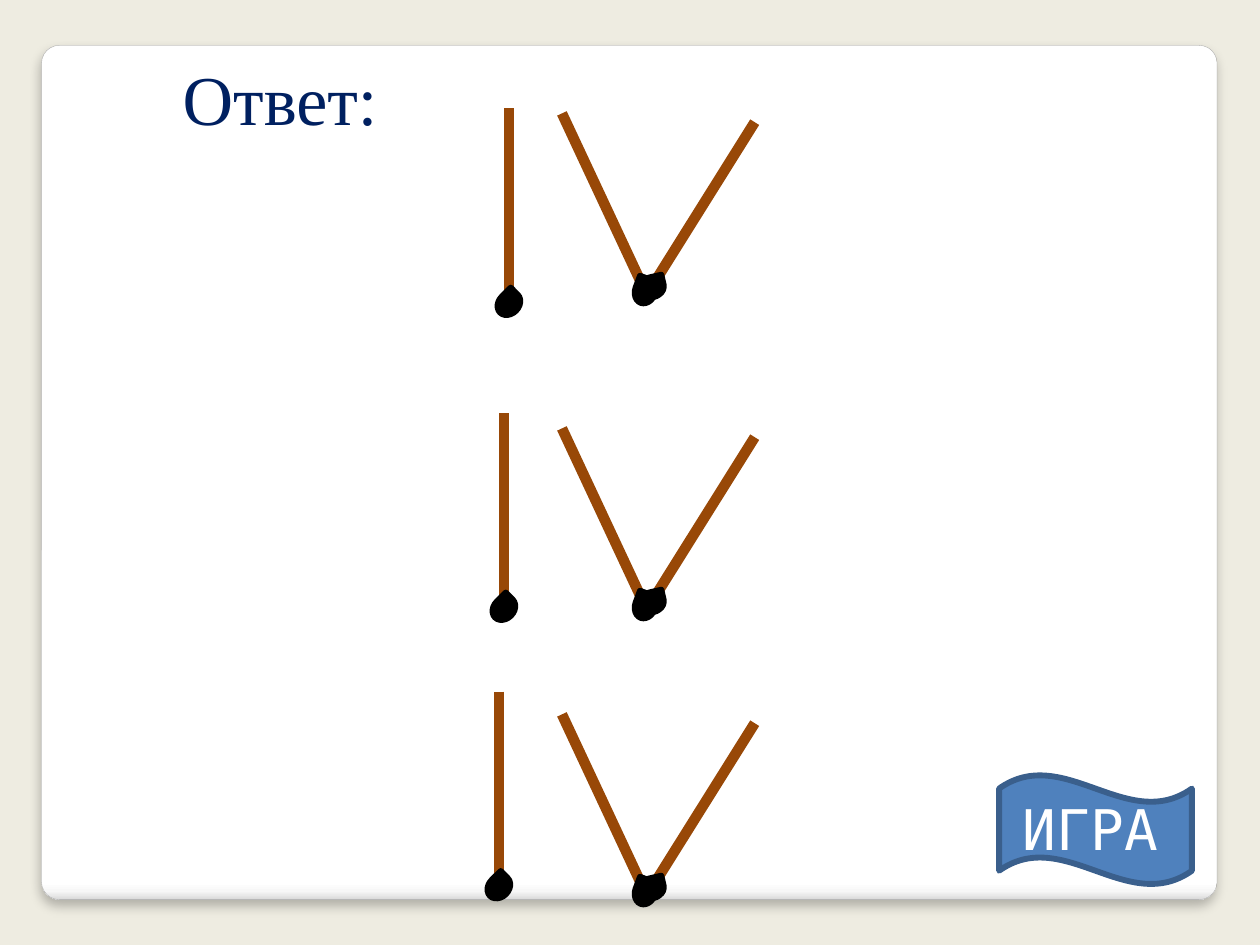
from dataclasses import dataclass

from lxml.etree import SubElement
from pptx import Presentation
from pptx.dml.color import RGBColor
from pptx.enum.shapes import MSO_CONNECTOR, MSO_SHAPE as Preset
from pptx.enum.text import MSO_ANCHOR, PP_ALIGN
from pptx.oxml import parse_xml
from pptx.oxml.ns import nsdecls, qn
from pptx.slide import Slide
from pptx.util import Inches, Pt

COLORS = {
    "background": "EEECE1",
    "panel": "FFFFFF",
    "panel_shade": "F7F7F7",
    "panel_edge": "DADADA",
    "panel_line": "A4A4A4",
    "title": "002060",
    "stick": "984807",
    "head": "000000",
    "button": "4F81BD",
    "button_line": "3A5F8C",
    "button_text": "FFFFFF",
}
HEAD_WIDTH, HEAD_HEIGHT = 0.16, 0.2


@dataclass(frozen=True)
class Match:
    """A match, with the head's offset from the top of its stick."""
    run: float
    drop: float
    head_x: float
    head_y: float
    turn: float


@dataclass(frozen=True)
class Numeral:
    """Tops of the I stick and of the left V stick."""
    one_x: float
    one_y: float
    five_y: float


LEFT_ARM = Match(0.66, 1.41, 0.58, 1.31, 20.1)
RIGHT_ARM = Match(-0.82, 1.31, -0.9, 1.21, 77.1)
UPRIGHT = Match(0, 1.55, -0.08, 1.45, 45.1)
LEFT_ARM_X, RIGHT_ARM_X, RIGHT_ARM_DROP = 4.46, 5.99, 0.07
NUMERALS = [
    Numeral(4.0, 3.28, 3.4),
    Numeral(3.96, 5.49, 5.67),
    Numeral(4.04, 0.86, 0.9),
]


def rgb(name: str) -> RGBColor:
    return RGBColor.from_string(COLORS[name])


def add_solid(shapes, preset, box: tuple, fill: str, line: str, width: float):
    shape = shapes.add_shape(preset, *map(Inches, box))
    shape.shadow.inherit = False
    shape.fill.solid()
    shape.fill.fore_color.rgb = rgb(fill)
    shape.line.color.rgb = rgb(line)
    shape.line.width = Pt(width)
    return shape


def add_panel(slide: Slide) -> None:
    panel = add_solid(slide.shapes, Preset.ROUNDED_RECTANGLE,
                      (0.33, 0.36, 9.33, 6.78), "panel", "panel_line", 0.16)
    panel.adjustments[0] = 0.021
    stops = [(0, "panel"), (98, "panel"), (99, "panel_shade"), (100, "panel_edge")]
    stop_xml = "".join(
        f'<a:gs pos="{position * 1000}"><a:srgbClr val="{COLORS[name]}"/></a:gs>'
        for position, name in stops)
    properties = panel._element.spPr
    properties.replace(properties.find(qn("a:solidFill")), parse_xml(
        f'<a:gradFill {nsdecls("a")} rotWithShape="1"><a:gsLst>{stop_xml}</a:gsLst>'
        '<a:lin ang="5400000" scaled="0"/></a:gradFill>'))
    properties.find(qn("a:effectLst")).append(parse_xml(
        f'<a:outerShdw {nsdecls("a")} blurRad="{Pt(6)}" dist="{Pt(4)}" dir="5400000"'
        ' algn="t" rotWithShape="0"><a:srgbClr val="000000">'
        '<a:alpha val="25000"/></a:srgbClr></a:outerShdw>'))
    # The panel goes behind the title placeholder.
    slide.shapes._spTree.insert(2, panel._element)


def add_title(slide: Slide) -> None:
    title = slide.shapes.title
    title.left, title.top = Inches(0.35), Inches(0.39)
    title.width, title.height = Inches(2.91), Inches(0.77)
    frame = title.text_frame
    frame.text = "Ответ:"
    frame.margin_left = Inches(1.1)
    frame.vertical_anchor = MSO_ANCHOR.TOP
    paragraph = frame.paragraphs[0]
    paragraph.alignment = PP_ALIGN.LEFT
    paragraph.font.name = "Times New Roman"
    paragraph.font.size = Pt(40)
    paragraph.font.color.rgb = rgb("title")


def add_match(slide: Slide, match: Match, x: float, y: float) -> None:
    parts = slide.shapes.add_group_shape().shapes
    stick = parts.add_connector(
        MSO_CONNECTOR.STRAIGHT, Inches(x), Inches(y),
        Inches(x + match.run), Inches(y + match.drop))
    stick.line.color.rgb = rgb("stick")
    stick.line.width = Pt(6)
    SubElement(stick._element.spPr, qn("a:effectLst"))
    head = add_solid(parts, Preset.TEAR,
                     (x + match.head_x, y + match.head_y, HEAD_WIDTH, HEAD_HEIGHT),
                     "head", "head", 3.35)
    head.rotation = match.turn
    head._element.spPr.find(qn("a:xfrm")).set("flipH", "1")


def add_numeral(slide: Slide, numeral: Numeral) -> None:
    add_match(slide, LEFT_ARM, LEFT_ARM_X, numeral.five_y)
    add_match(slide, RIGHT_ARM, RIGHT_ARM_X, numeral.five_y + RIGHT_ARM_DROP)
    add_match(slide, UPRIGHT, numeral.one_x, numeral.one_y)


def add_game_button(slide: Slide) -> None:
    parts = slide.shapes.add_group_shape().shapes
    add_solid(parts, Preset.WAVE, (7.93, 6.15, 1.53, 0.87),
              "button", "button_line", 3.35)
    label = parts.add_textbox(*map(Inches, (8.02, 6.26, 1.89, 0.64)))
    label.text_frame.word_wrap = True
    label.text_frame.text = "ИГРА"
    font = label.text_frame.paragraphs[0].font
    font.name = "DejaVu Sans Mono"
    font.size = Pt(32)
    font.color.rgb = rgb("button_text")


def main() -> None:
    deck = Presentation()
    deck.slide_width, deck.slide_height = Inches(10), Inches(7.5)
    slide = deck.slides.add_slide(deck.slide_layouts[5])
    slide.background.fill.solid()
    slide.background.fill.fore_color.rgb = rgb("background")
    add_panel(slide)
    add_title(slide)
    for numeral in NUMERALS:
        add_numeral(slide, numeral)
    add_game_button(slide)
    deck.save("out.pptx")


if __name__ == "__main__":
    main()
